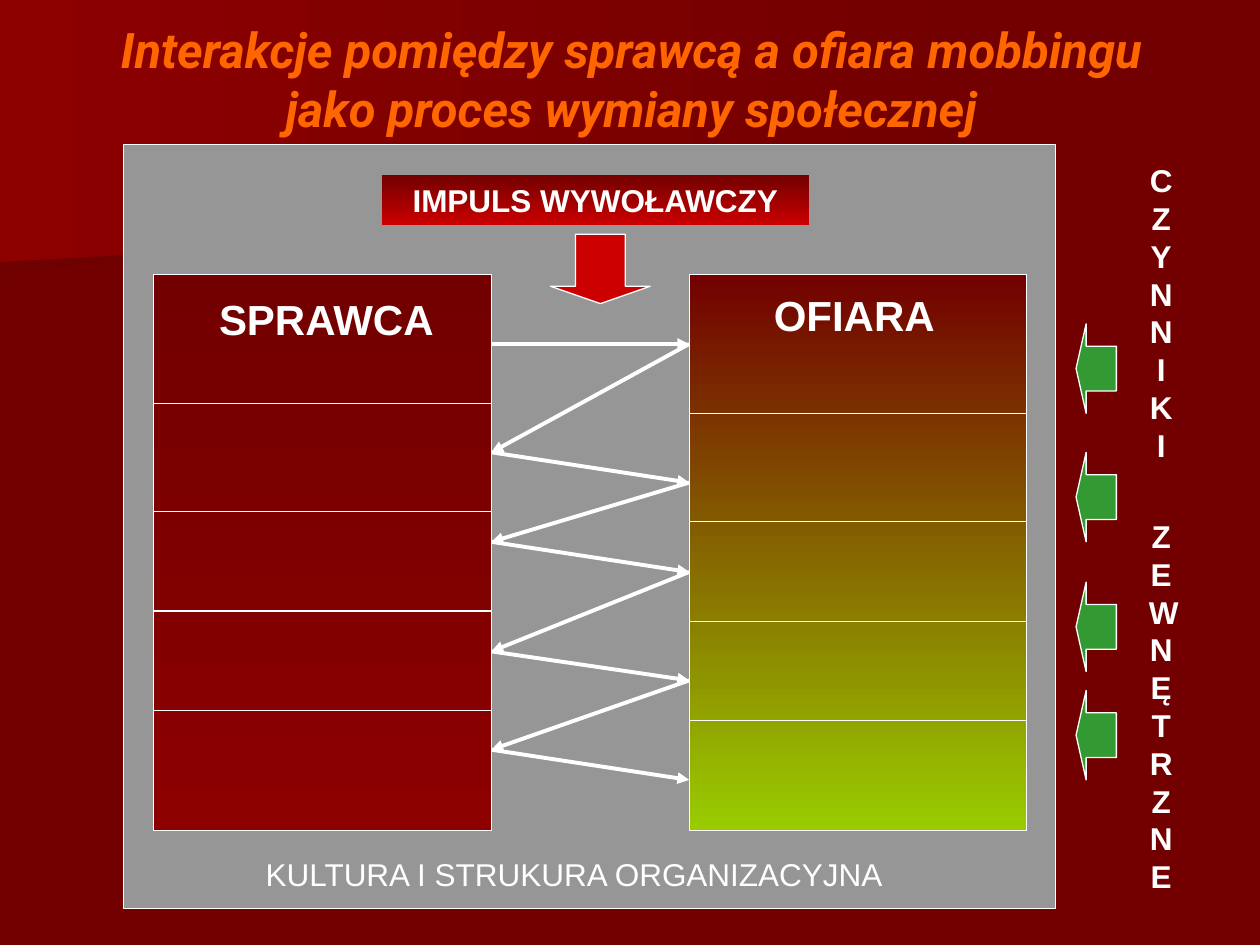
import itertools

import pptx
import pptx.dml.color
import pptx.enum.shapes
import pptx.enum.text
import pptx.util
from lxml import etree
from pptx.oxml.ns import qn

Inches = pptx.util.Inches
Pt = pptx.util.Pt
RGB = pptx.dml.color.RGBColor.from_string
MSO = pptx.enum.shapes.MSO_SHAPE
CENTER = pptx.enum.text.PP_ALIGN.CENTER
LEFT = pptx.enum.text.PP_ALIGN.LEFT
TOP = pptx.enum.text.MSO_ANCHOR.TOP
MIDDLE = pptx.enum.text.MSO_ANCHOR.MIDDLE


class Theme:
    maroon = "720000"
    shade = "6F0000"
    crimson = "8C0000"
    red = "CC0000"
    lime = "99CC00"
    green = "339933"
    gray = "969696"
    white = "FFFFFF"
    orange = "FF6600"
    title_font = "Roboto"
    body_font = "Arial"
    title_size = Pt(28)
    heading_size = Pt(24)
    body_size = Pt(18)
    outline = Pt(0.75)
    arrow = Pt(2.25)


def paint(shape, colors, angle=270, outlined=True):
    shape.shadow.inherit = False
    if len(colors) == 1:
        shape.fill.solid()
        shape.fill.fore_color.rgb = RGB(colors[0])
    else:
        shape.fill.gradient()
        shape.fill.gradient_angle = angle
        for stop, color in zip(shape.fill.gradient_stops, colors):
            stop.color.rgb = RGB(color)
    if outlined:
        shape.line.color.rgb = RGB(Theme.white)
        shape.line.width = Theme.outline
    else:
        shape.line.fill.background()


def write(shape, text, size, color=Theme.white, font=Theme.body_font,
          bold=True, italic=False, align=CENTER, anchor=TOP):
    frame = shape.text_frame
    frame.word_wrap = True
    frame.vertical_anchor = anchor
    frame.text = text
    for paragraph in frame.paragraphs:
        paragraph.alignment = align
        paragraph.font.size = size
        paragraph.font.name = font
        paragraph.font.bold = bold
        paragraph.font.italic = italic
        paragraph.font.color.rgb = RGB(color)


deck = pptx.Presentation()
deck.slide_width = Inches(10)
deck.slide_height = Inches(7.5)
slide = deck.slides.add_slide(deck.slide_layouts[6])
slide.background.fill.solid()
slide.background.fill.fore_color.rgb = RGB(Theme.maroon)
shapes = slide.shapes

backdrop = [
    ([(7.78, 1.53), (0, 2.17), (0, 1.01), (7.79, 1.01), (7.78, 1.28)], Theme.shade),
    ([(7.92, 1.62), (0, 2.08), (0, 0), (7.92, 0)], Theme.crimson),
]
for corners, color in backdrop:
    points = [(Inches(x), Inches(y)) for x, y in corners]
    builder = shapes.build_freeform(*points[0])
    builder.add_line_segments(points[1:], close=True)
    paint(builder.convert_to_shape(), [color, Theme.maroon], angle=0, outlined=False)

culture = shapes.add_shape(MSO.RECTANGLE, Inches(0.98), Inches(1.15), Inches(7.4), Inches(6.06))
paint(culture, [Theme.gray])

title = shapes.add_textbox(Inches(0.51), Inches(0), Inches(9), Inches(1.25))
write(title, "Interakcje pomiędzy sprawcą a ofiara mobbingu jako proces wymiany społecznej",
      Theme.title_size, Theme.orange, Theme.title_font, italic=True, anchor=MIDDLE)

column_width = 2.68
offender_left, victim_left = 1.22, 5.47
offender_right = offender_left + column_width
segments = []
columns = [
    ("SPRAWCA", offender_left, Theme.crimson, 1.28, 2.28, 0),
    ("OFIARA", victim_left, Theme.lime, victim_left, 2.25, 0.08),
]
for name, left, color, name_left, name_top, drop in columns:
    column = shapes.add_shape(MSO.RECTANGLE, Inches(left), Inches(2.18), Inches(column_width), Inches(4.41))
    paint(column, [Theme.maroon, color])
    heading = shapes.add_textbox(Inches(name_left), Inches(name_top), Inches(2.62), Inches(0.5))
    write(heading, name, Theme.heading_size)
    for y in (3.2, 4.06, 4.85, 5.64):
        segments.append(((left, y + drop), (left + column_width, y + drop), False))

exchange_levels = [2.73, 2.73, 3.59, 3.83, 4.3, 4.54, 5.17, 5.4, 5.95, 6.19]
exchange = list(zip(itertools.cycle([offender_right, victim_left]), exchange_levels))
segments += [(start, end, True) for start, end in itertools.pairwise(exchange)]

for start, end, is_arrow in segments:
    line = shapes.add_connector(pptx.enum.shapes.MSO_CONNECTOR.STRAIGHT,
                                *map(Inches, start + end))
    line.line.color.rgb = RGB(Theme.white)
    line.line.width = Theme.arrow if is_arrow else Theme.outline
    if is_arrow:
        etree.SubElement(line.line._get_or_add_ln(), qn("a:tailEnd"), type="triangle")
    etree.SubElement(line._element.spPr, qn("a:effectLst"))

culture_label = shapes.add_textbox(Inches(2.01), Inches(6.74), Inches(5.59), Inches(0.4))
write(culture_label, "KULTURA I STRUKURA ORGANIZACYJNA", Theme.body_size, bold=False, align=LEFT)

impulse = shapes.add_shape(MSO.RECTANGLE, Inches(3.03), Inches(1.39), Inches(3.39), Inches(0.4))
paint(impulse, [Theme.maroon, Theme.red], outlined=False)
write(impulse, "IMPULS WYWOŁAWCZY", Theme.body_size)

impulse_arrow = shapes.add_shape(MSO.DOWN_ARROW, Inches(4.37), Inches(1.86), Inches(0.79), Inches(0.55))
paint(impulse_arrow, [Theme.red])
impulse_arrow.adjustments[1] = 0.25

factors = shapes.add_shape(MSO.RECTANGLE, Inches(9.02), Inches(1.23), Inches(0.39), Inches(5.96))
paint(factors, [Theme.maroon], outlined=False)
write(factors, "CZYNNIKI\n ZEWNĘTRZNE", Theme.body_size)
for word in factors.text_frame.paragraphs:
    word.line_spacing = Pt(21.6)
factors.text_frame.paragraphs[1].space_before = Pt(9)

for top in (2.57, 3.59, 4.62, 5.48):
    factor_arrow = shapes.add_shape(MSO.LEFT_ARROW, Inches(8.54), Inches(top), Inches(0.32), Inches(0.71))
    paint(factor_arrow, [Theme.green])
    factor_arrow.adjustments[1] = 0.25

deck.save("out.pptx")
